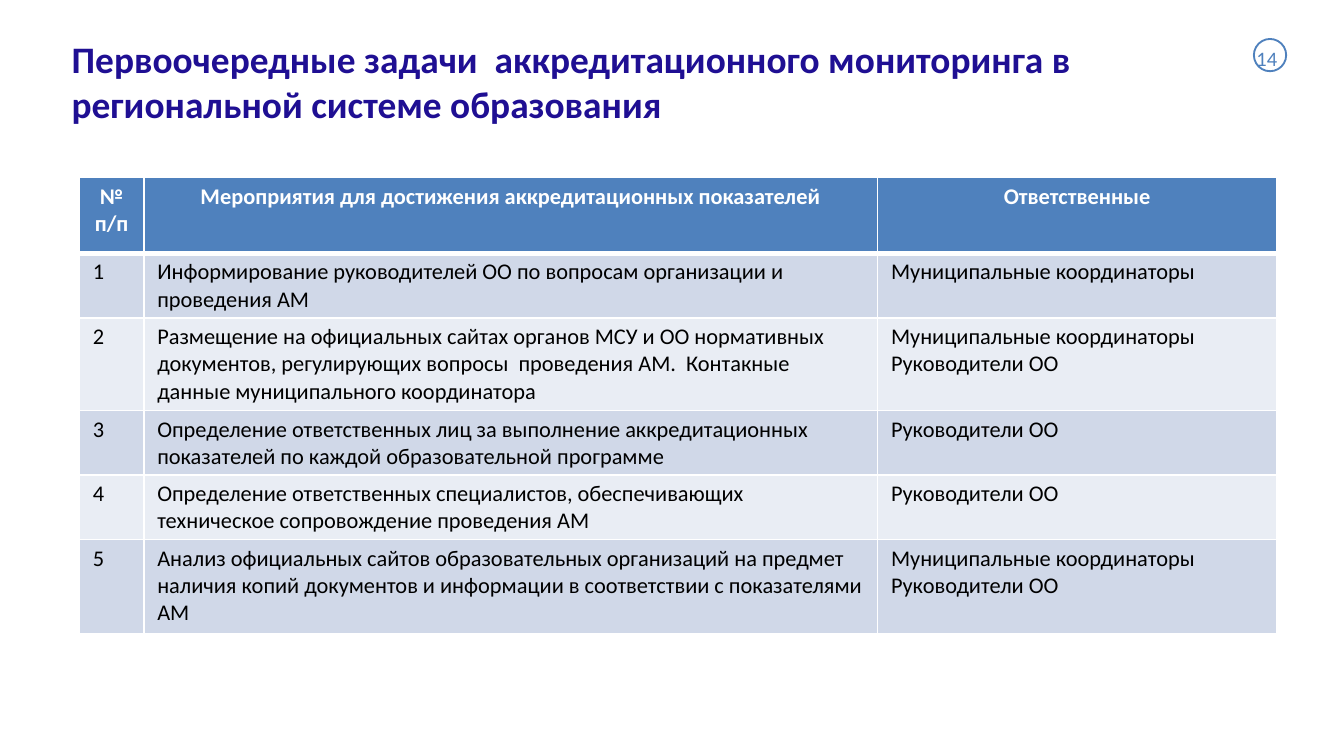
from lxml.etree import SubElement
from pptx import Presentation
from pptx.dml.color import RGBColor
from pptx.enum.shapes import MSO_SHAPE
from pptx.enum.text import MSO_ANCHOR, PP_ALIGN
from pptx.oxml.ns import qn
from pptx.util import Emu, Pt

PX = 4572  # 200 px to the inch
FONT = "Calibri"
WHITE, BLACK, NAVY, BLUE = "FFFFFF", "000000", "1F0F93", "4F81BD"
BANDS = ("D0D8E8", "E9EDF4")

TITLE = "Первоочередные задачи  аккредитационного мониторинга в региональной системе образования"
COLUMN_WIDTHS = (96, 1092, 594)
ROW_HEIGHTS = (113, 92, 138, 96, 92, 140)
HEADER = ("№ п/п", "Мероприятия для достижения аккредитационных показателей", "Ответственные")
COORDINATORS = "Муниципальные координаторы"
HEADS = "Руководители ОО"
TASKS = (
    ("Информирование руководителей ОО по вопросам организации и проведения АМ",
     (COORDINATORS,)),
    ("Размещение на официальных сайтах органов МСУ и ОО нормативных документов, "
     "регулирующих вопросы  проведения АМ.  Контакные данные муниципального координатора",
     (COORDINATORS, HEADS)),
    ("Определение ответственных лиц за выполнение аккредитационных показателей "
     "по каждой образовательной программе",
     (HEADS,)),
    ("Определение ответственных специалистов, обеспечивающих техническое сопровождение "
     "проведения АМ",
     (HEADS,)),
    ("Анализ официальных сайтов образовательных организаций на предмет наличия копий "
     "документов и информации в соответствии с показателями АМ",
     (COORDINATORS, HEADS)),
)


def px(length):
    return Emu(length * PX)


def color(value):
    return RGBColor.from_string(value)


def write(frame, lines, size, text_color, bold=False, align=PP_ALIGN.LEFT):
    """Put each line in a paragraph of its own."""
    for index, line in enumerate(lines):
        paragraph = frame.paragraphs[0] if index == 0 else frame.add_paragraph()
        paragraph.alignment = align
        run = paragraph.add_run()
        run.text = line
        run.font.name = FONT
        run.font.size = Pt(size)
        run.font.bold = bold
        run.font.color.rgb = color(text_color)


def add_text(slide, box, text, size, text_color, bold=False, anchor=MSO_ANCHOR.TOP):
    frame = slide.shapes.add_textbox(*map(px, box)).text_frame
    frame.word_wrap = True
    frame.vertical_anchor = anchor
    write(frame, [text], size, text_color, bold)


def add_borders(cell, top=1, bottom=1):
    """Draw white cell borders; widths are in points."""
    properties = cell._tc.get_or_add_tcPr()
    for side, width in (("L", 1), ("R", 1), ("T", top), ("B", bottom)):
        line = SubElement(properties, qn(f"a:ln{side}"), w=str(Pt(width)))
        fill = SubElement(line, qn("a:solidFill"))
        SubElement(fill, qn("a:srgbClr"), val=WHITE)


def add_task_table(slide, left, top):
    rows = [[(text,) for text in HEADER]]
    rows += [((str(number),), (task,), people)
             for number, (task, people) in enumerate(TASKS, 1)]
    table = slide.shapes.add_table(
        len(rows), len(HEADER), px(left), px(top),
        px(sum(COLUMN_WIDTHS)), px(sum(ROW_HEIGHTS))).table
    for column, width in zip(table.columns, COLUMN_WIDTHS):
        column.width = px(width)
    for row, height in zip(table.rows, ROW_HEIGHTS):
        row.height = px(height)

    for row_index, row in enumerate(rows):
        is_header = row_index == 0
        for column_index, lines in enumerate(row):
            cell = table.cell(row_index, column_index)
            cell.margin_left = cell.margin_right = px(20)
            cell.margin_top = cell.margin_bottom = px(8)
            add_borders(cell, top=3 if row_index == 1 else 1, bottom=3 if is_header else 1)
            cell.fill.solid()
            cell.fill.fore_color.rgb = color(BLUE if is_header else BANDS[(row_index - 1) % 2])
            write(cell.text_frame, lines, 12, WHITE if is_header else BLACK, is_header,
                  PP_ALIGN.CENTER if is_header else PP_ALIGN.LEFT)


def add_page_number(slide, left, top, number):
    circle = slide.shapes.add_shape(
        MSO_SHAPE.OVAL, px(left + 16), px(top), px(48), px(48))
    circle.shadow.inherit = False
    circle.fill.solid()
    circle.fill.fore_color.rgb = color(WHITE)
    circle.line.color.rgb = color(BLUE)
    circle.line.width = Pt(1)
    add_text(slide, (left, top, 78, 58), number, 11, BLUE)


def main():
    presentation = Presentation()
    presentation.slide_width, presentation.slide_height = px(2000), px(1125)
    slide = presentation.slides.add_slide(presentation.slide_layouts[6])
    add_text(slide, (87, 43, 1800, 156), TITLE, 20, NAVY, True, MSO_ANCHOR.MIDDLE)
    add_task_table(slide, 118, 264)
    add_page_number(slide, 1850, 58, "14")
    presentation.save("out.pptx")


if __name__ == "__main__":
    main()
